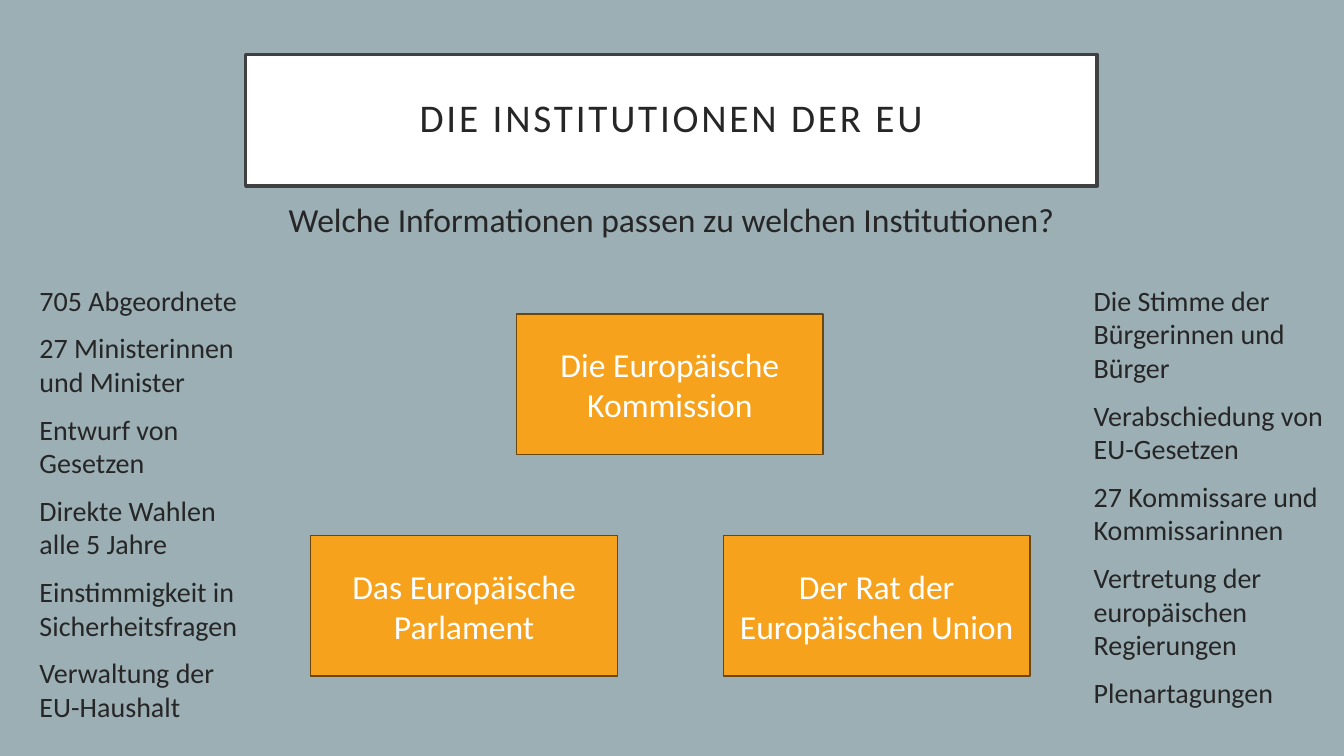
from lxml.etree import SubElement
from pptx import Presentation
from pptx.dml.color import RGBColor
from pptx.enum.shapes import MSO_SHAPE as SHAPE
from pptx.enum.text import MSO_ANCHOR as ANCHOR, MSO_AUTO_SIZE as AUTO_SIZE, PP_ALIGN as ALIGN
from pptx.oxml.ns import qn
from pptx.util import Emu, Pt

EMU_PER_PX = 9525
FONT = "Calibri"
BACKGROUND = RGBColor(0x9B, 0xAF, 0xB5)
WHITE = RGBColor(0xFF, 0xFF, 0xFF)
INK = RGBColor(0x26, 0x26, 0x26)
FRAME = RGBColor(0x40, 0x40, 0x40)
ORANGE = RGBColor(0xF6, 0xA2, 0x1D)
BROWN = RGBColor(0x6C, 0x47, 0x0D)

LEFT_FACTS = [
    "705 Abgeordnete",
    "27 Ministerinnen und Minister",
    "Entwurf von Gesetzen",
    "Direkte Wahlen alle 5 Jahre",
    "Einstimmigkeit in Sicherheitsfragen",
    "Verwaltung der EU-Haushalt",
]
RIGHT_FACTS = [
    "Die Stimme der Bürgerinnen und Bürger",
    "Verabschiedung von EU-Gesetzen",
    "27 Kommissare und Kommissarinnen",
    "Vertretung der europäischen Regierungen",
    "Plenartagungen",
]

# Institution boxes: two below, one centred above the gap
BOX_W, BOX_H = 292, 134
LEFT_X, RIGHT_X = 296, 689
TOP_Y, BOTTOM_Y = 299, 510
INSTITUTIONS = [
    (["Die Europäische Kommission"], (LEFT_X + RIGHT_X) // 2, TOP_Y),
    (["Das Europäische", "Parlament"], LEFT_X, BOTTOM_Y),
    (["Der Rat der Europäischen Union"], RIGHT_X, BOTTOM_Y),
]


def px(length):
    return Emu(length * EMU_PER_PX)


def place(shape, x, y, w, h):
    shape.left, shape.top, shape.width, shape.height = map(px, (x, y, w, h))


def paint(shape, fill, line, weight):
    shape.fill.solid()
    shape.fill.fore_color.rgb = fill
    shape.line.color.rgb = line
    shape.line.width = Pt(weight)


def write(shape, lines, size=20, color=INK, align=ALIGN.LEFT, anchor=ANCHOR.TOP,
          before=0, line_spacing=1.0, tracking=0):
    frame = shape.text_frame
    frame.word_wrap = True
    frame.auto_size = AUTO_SIZE.NONE
    frame.vertical_anchor = anchor
    for index, line in enumerate(lines):
        paragraph = frame.add_paragraph() if index else frame.paragraphs[0]
        paragraph.alignment = align
        paragraph.space_before = Pt(before)
        paragraph.line_spacing = line_spacing
        run = paragraph.add_run()
        run.text = line
        run.font.name = FONT
        run.font.size = Pt(size)
        run.font.color.rgb = color
        if tracking:
            run.font._element.set("spc", str(tracking * 100))


def add_title(slide, text):
    title = slide.shapes.title
    place(title, 234, 52, 811, 125)
    paint(title, WHITE, FRAME, 2.5)
    write(title, [text], size=28, align=ALIGN.CENTER, anchor=ANCHOR.MIDDLE,
          line_spacing=0.9, tracking=2)


def add_question(slide, text):
    question = slide.shapes.add_textbox(px(234), px(185), px(811), px(55))
    write(question, [text], size=24, align=ALIGN.CENTER, before=10)


def fill_facts(placeholder, facts, x, y, w, h):
    place(placeholder, x, y, w, h)
    write(placeholder, facts, before=10)
    # Plain lines without bullet or hanging indent
    for paragraph in placeholder.text_frame.paragraphs:
        properties = paragraph._p.get_or_add_pPr()
        properties.set("marL", "0")
        properties.set("indent", "0")
        SubElement(properties, qn("a:buNone"))


def add_institution(slide, lines, x, y):
    box = slide.shapes.add_shape(SHAPE.RECTANGLE, px(x), px(y), px(BOX_W), px(BOX_H))
    box.shadow.inherit = False
    paint(box, ORANGE, BROWN, 1)
    write(box, lines, size=24, color=WHITE, align=ALIGN.CENTER, anchor=ANCHOR.MIDDLE)


def main():
    deck = Presentation()
    deck.slide_width, deck.slide_height = px(1280), px(720)
    slide = deck.slides.add_slide(deck.slide_layouts.get_by_name("Two Content"))
    slide.background.fill.solid()
    slide.background.fill.fore_color.rgb = BACKGROUND

    # Heading and task
    add_title(slide, "DIE INSTITUTIONEN DER EU")
    add_question(slide, "Welche Informationen passen zu welchen Institutionen?")

    # Facts to be matched, on both sides
    fill_facts(slide.placeholders[1], LEFT_FACTS, 28, 265, 212, 429)
    fill_facts(slide.placeholders[2], RIGHT_FACTS, 1032, 265, 241, 433)

    # Institutions in the middle
    for lines, x, y in INSTITUTIONS:
        add_institution(slide, lines, x, y)

    deck.save("out.pptx")


if __name__ == "__main__":
    main()
